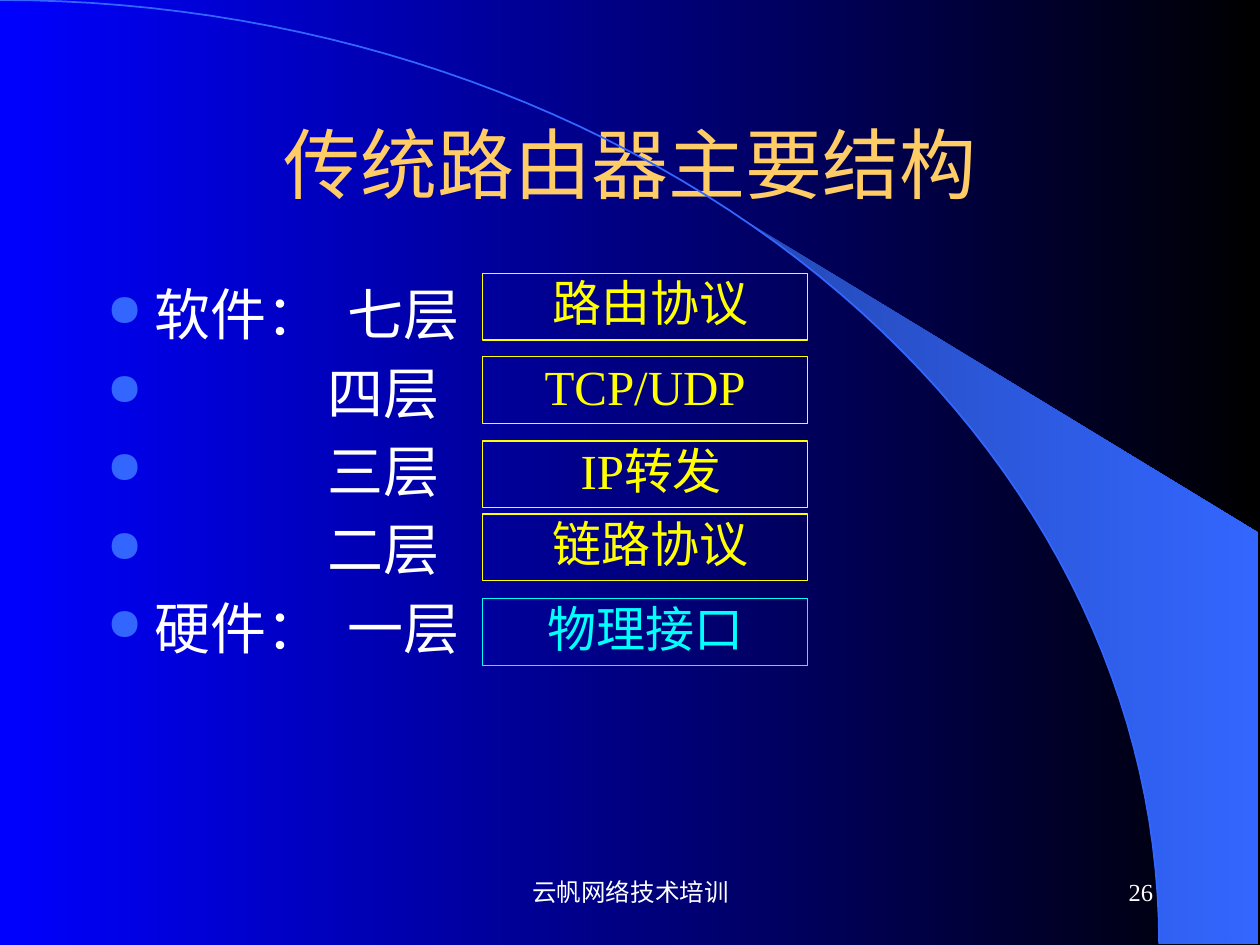
from math import asin, cos, pi, sin

from lxml import etree
from pptx import Presentation
from pptx.dml.color import RGBColor
from pptx.enum.shapes import MSO_SHAPE
from pptx.enum.text import MSO_ANCHOR, PP_ALIGN
from pptx.oxml.ns import qn
from pptx.util import Inches, Pt

RECTANGLE = MSO_SHAPE.RECTANGLE
TOP, MIDDLE = MSO_ANCHOR.TOP, MSO_ANCHOR.MIDDLE
LEFT, CENTER, RIGHT = PP_ALIGN.LEFT, PP_ALIGN.CENTER, PP_ALIGN.RIGHT
SERIF, SANS = "Times New Roman", "Arial"
COLORS = {
    "blue": "0000FF", "black": "000000", "accent": "3366FF", "wedge": "2449B6",
    "title": "FFCC66", "text": "FFFFFF", "software": "FFFF00", "hardware": "00FFFF",
}
LAYERS = [
    ("软件：", "七层"), ("", "四层"), ("", "三层"), ("", "二层"), ("硬件：", "一层"),
]
PROTOCOLS = [
    (2.17, " ", "路由协议", "software"),
    (2.83, "", "TCP/UDP", "software"),
    (3.5, " ", "IP转发", "software"),
    (4.08, " ", "链路协议", "software"),
    (4.75, "", "物理接口", "hardware"),
]


def rgb(name):
    """Return the named colour."""
    return RGBColor.from_string(COLORS[name])


def add_run(paragraph, text, size, color, font=SERIF):
    """Append a formatted run and return it."""
    run = paragraph.add_run()
    run.text = text
    run.font.size = Pt(size)
    run.font.name = font
    run.font.color.rgb = rgb(color)
    return run


def set_gradient(fill, start, end):
    """Fill from left to right between two named colours."""
    fill.gradient()
    fill.gradient_angle = 0
    for stop, position, name in zip(fill.gradient_stops, (0, 1), (start, end)):
        stop.position = position
        stop.color.rgb = rgb(name)


def curve_points(width, height, start_angle, steps):
    """Return points on a quarter ellipse, down to its lower right end."""
    angles = [start_angle + (pi / 2 - start_angle) * i / steps for i in range(steps + 1)]
    return [(Inches(width * sin(a)), Inches(height * (1 - cos(a)))) for a in angles]


def add_outline(slide, points, close):
    """Draw a freeform through the points."""
    builder = slide.shapes.build_freeform(*points[0])
    builder.add_line_segments(points[1:], close=close)
    shape = builder.convert_to_shape()
    shape.shadow.inherit = False
    return shape


def add_backdrop(slide, width, height):
    """Place the gradient, the wedge and the curve behind the content."""
    set_gradient(slide.background.fill, "blue", "black")
    edge = curve_points(width, height, asin(5.89 / width), 30)
    corner = [(Inches(9.99), Inches(height)), (Inches(9.99), Inches(4.23))]
    wedge = add_outline(slide, edge + corner, True)
    set_gradient(wedge.fill, "wedge", "accent")
    wedge.line.fill.background()
    curve = add_outline(slide, curve_points(width, height, 0, 60), False)
    curve.fill.background()
    curve.line.color.rgb = rgb("accent")
    curve.line.width = Pt(1)


def add_title(slide, left, top, width, height):
    """Place and format the slide title."""
    title = slide.shapes.title
    title.left, title.top = Inches(left), Inches(top)
    title.width, title.height = Inches(width), Inches(height)
    title.text_frame.vertical_anchor = MIDDLE
    paragraph = title.text_frame.paragraphs[0]
    paragraph.alignment = CENTER
    add_run(paragraph, "传统路由器主要结构", 44, "title", SANS)


def add_text_frame(slide, left, top, width, height, anchor):
    """Add a wrapping text box and return its frame."""
    box = slide.shapes.add_textbox(Inches(left), Inches(top), Inches(width), Inches(height))
    box.text_frame.word_wrap = True
    box.text_frame.vertical_anchor = anchor
    return box.text_frame


def set_bullet(paragraph, indent):
    """Give the paragraph a round bullet and a hanging indent."""
    properties = paragraph._p.get_or_add_pPr()
    properties.set("marL", str(Inches(indent)))
    properties.set("indent", str(-Inches(indent)))
    color = etree.SubElement(properties, qn("a:buClr"))
    etree.SubElement(color, qn("a:srgbClr")).set("val", COLORS["accent"])
    etree.SubElement(properties, qn("a:buSzPct")).set("val", "80000")
    etree.SubElement(properties, qn("a:buChar")).set("char", "●")


def add_layers(slide, left, top, width, height):
    """List the layers, grouped under software and hardware."""
    frame = add_text_frame(slide, left, top, width, height, TOP)
    for index, (group, layer) in enumerate(LAYERS):
        paragraph = frame.add_paragraph() if index else frame.paragraphs[0]
        paragraph.alignment = LEFT
        paragraph.space_before = Pt(6.4)
        set_bullet(paragraph, 0.38 if group else 1.75)
        if group:
            add_run(paragraph, group, 32, "text")
            gap = add_run(paragraph, " ", 32, "text")
            gap._r.get_or_add_rPr().set("spc", "700")
        add_run(paragraph, layer, 32, "text")


def add_protocols(slide, left, width, height):
    """Stack the framed protocol names beside their layers."""
    for top, lead, name, color in PROTOCOLS:
        box = slide.shapes.add_shape(
            RECTANGLE, Inches(left), Inches(top), Inches(width), Inches(height))
        box.shadow.inherit = False
        box.fill.background()
        box.line.color.rgb = rgb(color)
        box.line.width = Pt(0.75)
        box.text_frame.word_wrap = True
        box.text_frame.vertical_anchor = TOP
        paragraph = box.text_frame.paragraphs[0]
        paragraph.alignment = CENTER
        paragraph.line_spacing = 0.9
        if lead:
            add_run(paragraph, lead, 28, "text")
        add_run(paragraph, name, 28, color)


def add_footer(slide, top, height):
    """Place the course name and the page number."""
    for left, width, text, alignment in (
        (3.42, 3.17, "云帆网络技术培训", CENTER),
        (7.17, 2.08, "26", RIGHT),
    ):
        frame = add_text_frame(slide, left, top, width, height, MIDDLE)
        frame.paragraphs[0].alignment = alignment
        add_run(frame.paragraphs[0], text, 14, "text")


def main():
    """Build and save the slide."""
    deck = Presentation()
    deck.slide_width, deck.slide_height = Inches(10), Inches(7.5)
    slide = deck.slides.add_slide(deck.slide_layouts[5])
    add_backdrop(slide, 9.2, 7.49)
    add_footer(slide, 6.83, 0.5)
    add_title(slide, 0.75, 0.67, 8.5, 1.25)
    add_layers(slide, 0.75, 2.17, 8.5, 4.5)
    add_protocols(slide, 3.83, 2.58, 0.53)
    deck.save("out.pptx")


if __name__ == "__main__":
    main()
